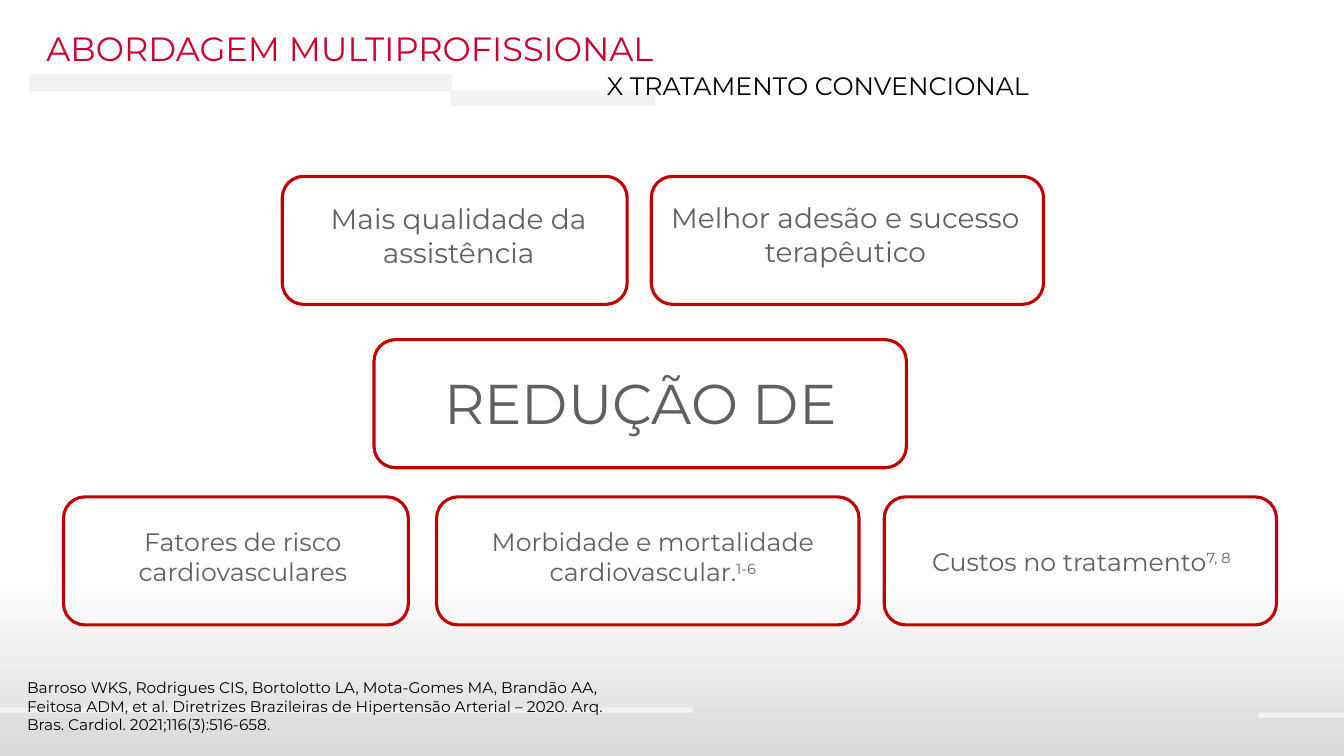
from pptx import Presentation
from pptx.dml.color import RGBColor
from pptx.enum.shapes import MSO_SHAPE as SHAPE
from pptx.enum.text import MSO_ANCHOR as ANCHOR, MSO_AUTO_SIZE as FIT, PP_ALIGN as ALIGN
from pptx.util import Inches, Pt

COLORS = {"white": "FFFFFF", "shade": "D9D9D9", "bar": "F2F2F2", "title": "C80030",
          "gray": "606060", "edge": "C00000", "black": "000000"}
FONT = "Montserrat"

BARS = [(0.29, 0.73, 4.19, 0.18), (4.47, 0.9, 2.03, 0.15),
        (0, 7.02, 6.87, 0.05), (12.48, 7.07, 0.85, 0.05)]

# Card left and width, text offset (x, y) and size (w, h), font size, wording, superscript
CARD_H = 1.27
ROWS = [
    (1.75, [(2.8, 3.42, (-0.08, 0.2, 3.66, 1.11), 20, "Mais qualidade da assistência", ""),
            (6.46, 3.89, (-0.15, 0.19, 4.15, 1.11), 20,
             "Melhor adesão e sucesso terapêutico", "")]),
    (3.37, [(3.71, 5.28, (-0.62, 0.24, 6.52, 0.77), 40, "REDUÇÃO DE", "")]),
    (4.93, [(0.63, 3.42, (0, 0.24, 3.56, 1.01), 18, "Fatores de risco cardiovasculares", ""),
            (4.33, 4.19, (0.1, 0.24, 4.09, 0.71), 18,
             "Morbidade e mortalidade cardiovascular.", "1-6"),
            (8.77, 3.89, (0, 0.44, 3.91, 0.71), 18, "Custos no tratamento", "7, 8")]),
]
SOURCE = ("Barroso WKS, Rodrigues CIS, Bortolotto LA, Mota-Gomes MA, Brandão AA, "
          "Feitosa ADM, et al. Diretrizes Brazileiras de Hipertensão Arterial – 2020. "
          "Arq. Bras. Cardiol. 2021;116(3):516-658.")


def rgb(name):
    return RGBColor.from_string(COLORS[name])


def inches(box):
    return [Inches(v) for v in box]


def add_run(para, text, size, color, raised=False):
    run = para.add_run()
    run.text = text
    run.font.name = FONT
    run.font.size = Pt(size)
    run.font.color.rgb = rgb(color)
    if raised:
        run._r.get_or_add_rPr().set("baseline", "30000")


def set_frame(frame, align):
    """Prepare a top-anchored, wrapping frame and return its first paragraph."""
    frame.word_wrap = True
    frame.auto_size = FIT.NONE
    frame.vertical_anchor = ANCHOR.TOP
    para = frame.paragraphs[0]
    para.alignment = align
    return para


def add_text(slide, box, text, size, color, align=ALIGN.LEFT, note=""):
    frame = slide.shapes.add_textbox(*inches(box)).text_frame
    para = set_frame(frame, align)
    add_run(para, text, size, color)
    if note:
        add_run(para, note, size, color, raised=True)


def add_backdrop(slide):
    fill = slide.background.fill
    fill.gradient()
    fill.gradient_angle = 270
    for stop, place, color in zip(fill.gradient_stops, (0.76, 1), ("white", "shade")):
        stop.position = place
        stop.color.rgb = rgb(color)
    for box in BARS:
        bar = slide.shapes.add_shape(SHAPE.RECTANGLE, *inches(box))
        bar.shadow.inherit = False
        bar.fill.solid()
        bar.fill.fore_color.rgb = rgb("bar")
        bar.line.fill.background()


def add_header(slide, box):
    left, top, width, height = box
    title = slide.shapes.title
    title.left, title.top, title.width, title.height = inches(box)
    para = set_frame(title.text_frame, ALIGN.LEFT)
    add_run(para, "ABORDAGEM MULTIPROFISSIONAL", 24, "title")
    add_text(slide, (left + 5.56, top + 0.42, 6.52, 0.4),
             "X TRATAMENTO CONVENCIONAL", 18, "black")


def add_card(slide, box, inner, size, text, note):
    left, top = box[:2]
    card = slide.shapes.add_shape(SHAPE.ROUNDED_RECTANGLE, *inches(box))
    card.shadow.inherit = False
    card.fill.background()
    card.line.color.rgb = rgb("edge")
    card.line.width = Pt(2.25)
    dx, dy, width, height = inner
    add_text(slide, (left + dx, top + dy, width, height), text, size, "gray",
             ALIGN.CENTER, note)


def main():
    prs = Presentation()
    prs.slide_width, prs.slide_height = Inches(13.33), Inches(7.5)
    slide = prs.slides.add_slide(prs.slide_layouts[5])
    add_backdrop(slide)
    add_header(slide, (0.36, 0.23, 12.97, 0.5))
    for top, cards in ROWS:
        for left, width, *rest in cards:
            add_card(slide, (left, top, width, CARD_H), *rest)
    add_text(slide, (0.17, 6.68, 6.05, 0.66), SOURCE, 11, "black")
    prs.save("out.pptx")


if __name__ == "__main__":
    main()
